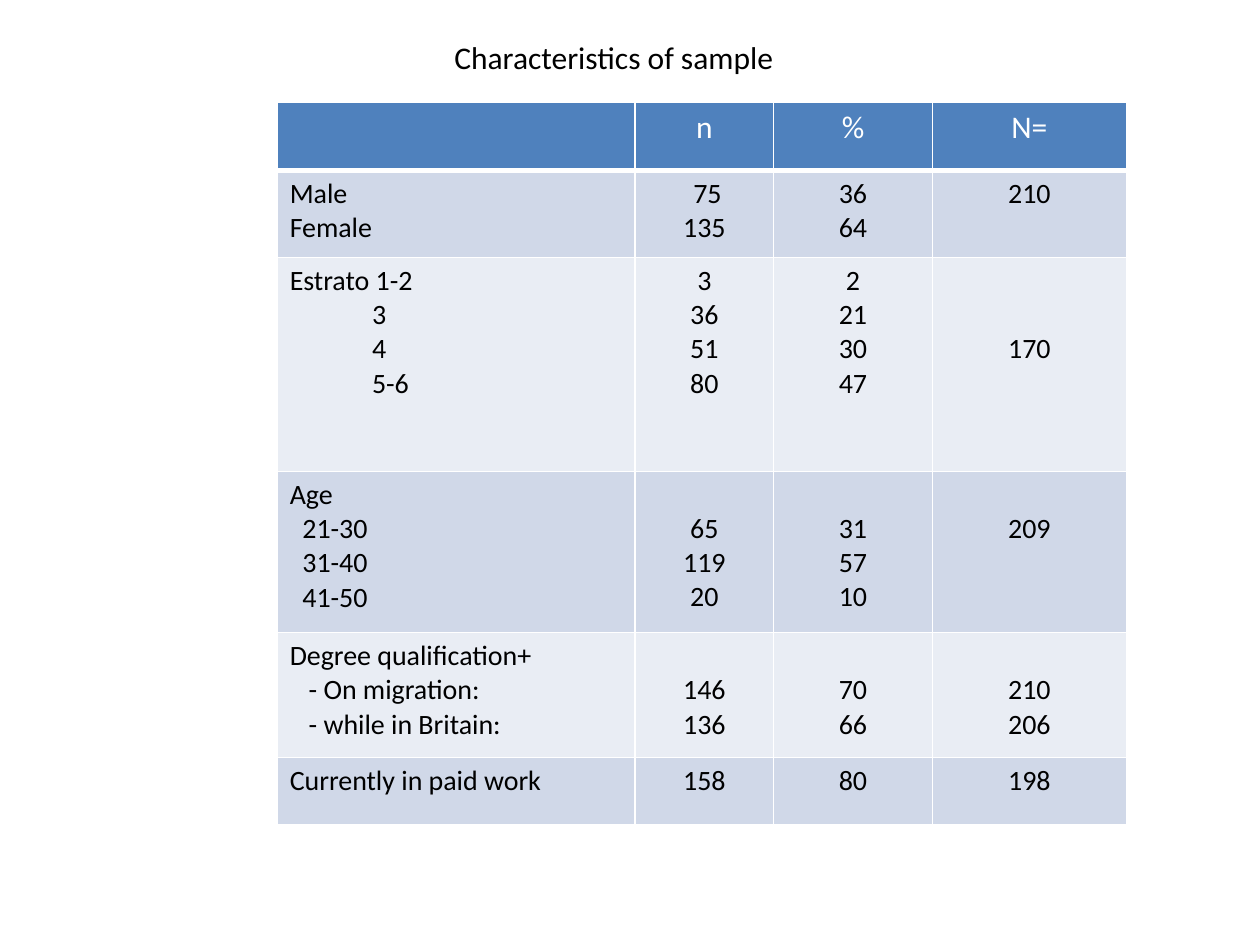
from dataclasses import dataclass

from lxml.etree import SubElement
from pptx import Presentation
from pptx.dml.color import RGBColor as Color
from pptx.enum.text import MSO_AUTO_SIZE as AutoSize, PP_ALIGN as Align
from pptx.oxml.ns import qn
from pptx.util import Pt


@dataclass(frozen=True)
class Theme:
    font: str = "Calibri"
    heading_size: int = 18
    body_size: int = 16
    line_height: float = 19.5
    inset: float = 3.6
    text: str = "000000"
    light: str = "FFFFFF"
    header: str = "4F81BD"
    bands: tuple = ("D0D8E8", "E9EDF4")


@dataclass(frozen=True)
class Entry:
    lines: tuple
    indent: float = 0
    skipped: int = 0


HEADERS = ("", "n", "%", "N=")
COLUMN_WIDTHS = (204.5, 79.2, 90.7, 110.9)
HEADER_HEIGHT = 38.9
GROUPS = (
    (49.7, Entry(("Male", "Female")),
     Entry((" 75", "135")), Entry(("36", "64")), Entry(("210",))),
    (122.3, Entry(("Estrato 1-2", "3", "4", "5-6"), 47),
     Entry(("3", "36", "51", "80")), Entry(("2", "21", "30", "47")),
     Entry(("170",), skipped=2)),
    (92.2, Entry(("Age", "21-30", "31-40", "41-50"), 7.2),
     Entry(("65", "119", "20"), skipped=1), Entry(("31", "57", "10"), skipped=1),
     Entry(("209",), skipped=1)),
    (71.3, Entry(("Degree qualification+", "- On migration:", "- while in Britain:"), 10.8),
     Entry(("146", "136"), skipped=1), Entry(("70", "66"), skipped=1),
     Entry(("210", "206"), skipped=1)),
    (38.2, Entry(("Currently in paid work",)),
     Entry(("158",)), Entry(("80",)), Entry(("198",))),
)


class SlideBuilder:
    def __init__(self, slide, theme):
        self.slide = slide
        self.theme = theme

    def add_run(self, paragraph, text, size, color, align):
        paragraph.alignment = align
        run = paragraph.add_run()
        run.text = text
        run.font.name = self.theme.font
        run.font.size = Pt(size)
        run.font.bold = False
        run.font.color.rgb = Color.from_string(color)

    def add_title(self, text, left, top, width, height):
        shape = self.slide.shapes.add_textbox(Pt(left), Pt(top), Pt(width), Pt(height))
        frame = shape.text_frame
        frame.word_wrap = True
        frame.auto_size = AutoSize.SHAPE_TO_FIT_TEXT
        self.add_run(frame.paragraphs[0], text, self.theme.heading_size,
                     self.theme.text, Align.CENTER)

    def style_cell(self, cell, fill, bottom_width=1):
        properties = cell._tc.get_or_add_tcPr()
        for side, width in (("L", 1), ("R", 1), ("T", 1), ("B", bottom_width)):
            line = SubElement(properties, qn(f"a:ln{side}"), w=str(Pt(width)))
            solid = SubElement(line, qn("a:solidFill"))
            SubElement(solid, qn("a:srgbClr"), val=self.theme.light)
        cell.fill.solid()
        cell.fill.fore_color.rgb = Color.from_string(fill)

    def fill_entry(self, cell, entry, align):
        theme = self.theme
        cell.margin_top = Pt(theme.inset + entry.skipped * theme.line_height)
        frame = cell.text_frame
        for index, text in enumerate(entry.lines):
            paragraph = frame.add_paragraph() if index else frame.paragraphs[0]
            if index and entry.indent:
                paragraph._p.get_or_add_pPr().set("marL", str(Pt(entry.indent)))
            self.add_run(paragraph, text, theme.body_size, theme.text, align)

    def add_table(self, left, top):
        theme = self.theme
        heights = [HEADER_HEIGHT] + [group[0] for group in GROUPS]
        table = self.slide.shapes.add_table(
            len(heights), len(COLUMN_WIDTHS), Pt(left), Pt(top),
            Pt(sum(COLUMN_WIDTHS)), Pt(sum(heights))).table
        for column, width in zip(table.columns, COLUMN_WIDTHS):
            column.width = Pt(width)
        for row, height in zip(table.rows, heights):
            row.height = Pt(height)
        for column, label in enumerate(HEADERS):
            cell = table.cell(0, column)
            self.style_cell(cell, theme.header, bottom_width=3)
            if label:
                self.add_run(cell.text_frame.paragraphs[0], label,
                             theme.heading_size, theme.light, Align.CENTER)
        for row, (_, *entries) in enumerate(GROUPS, start=1):
            for column, entry in enumerate(entries):
                cell = table.cell(row, column)
                self.style_cell(cell, theme.bands[(row - 1) % 2])
                self.fill_entry(cell, entry, Align.CENTER if column else Align.LEFT)


def main():
    presentation = Presentation()
    presentation.slide_width = Pt(720)
    presentation.slide_height = Pt(540)
    slide = presentation.slides.add_slide(presentation.slide_layouts[6])
    builder = SlideBuilder(slide, Theme())
    builder.add_title("Characteristics of sample", 131.8, 18, 437.8, 28.8)
    builder.add_table(158.4, 58.5)
    presentation.save("out.pptx")


if __name__ == "__main__":
    main()
